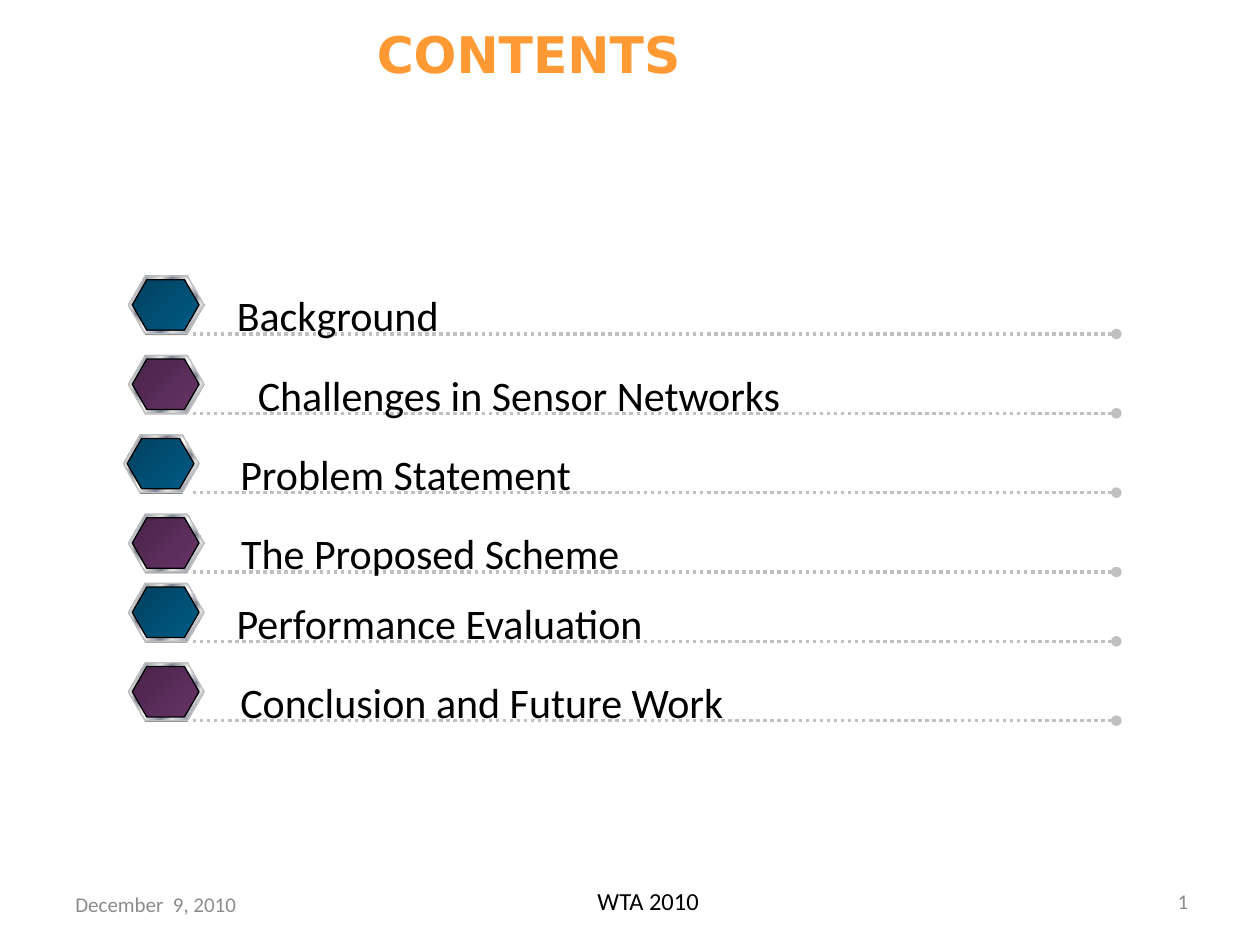
from lxml import etree
from pptx import Presentation
from pptx.dml.color import RGBColor
from pptx.enum.dml import MSO_LINE
from pptx.enum.shapes import MSO_CONNECTOR, MSO_SHAPE
from pptx.enum.text import MSO_ANCHOR, PP_ALIGN
from pptx.oxml import parse_xml
from pptx.oxml.ns import nsdecls, qn
from pptx.util import Inches, Pt

HEXAGON = MSO_SHAPE.HEXAGON
STRAIGHT = MSO_CONNECTOR.STRAIGHT
DOTTED = MSO_LINE.ROUND_DOT
TOP, MIDDLE = MSO_ANCHOR.TOP, MSO_ANCHOR.MIDDLE
LEFT, CENTER, RIGHT = PP_ALIGN.LEFT, PP_ALIGN.CENTER, PP_ALIGN.RIGHT
TITLE_ONLY = 5

TITLE = "CONTENTS"
# text, rule y, hexagon left, text left, text width
ITEMS = [
    ("Background", 2.65, 1.02, 1.69, 1.98),
    ("Challenges in Sensor Networks", 3.28, 1.02, 1.69, 4.86),
    ("Problem Statement", 3.91, 0.98, 1.69, 3.06),
    ("The Proposed Scheme", 4.54, 1.02, 1.61, 3.61),
    ("Performance Evaluation", 5.09, 1.02, 1.61, 3.76),
    ("Conclusion and Future Work", 5.72, 1.02, 1.61, 4.43),
]
DATE, FOOTER = "December  9, 2010", "WTA 2010"

THEME = {
    "font": "Calibri", "title_font": "DejaVu Sans",
    "title": "FF9933", "text": "000000", "muted": "8C8C8C",
    "rule": "C0C0C0", "shade": "808080", "edge": "000000",
    "title_size": 28.8, "item_size": 24, "footer_size": 14, "small_size": 12,
    "metal": [(0, "E6E6E6"), (8, "7D8496"), (26, "E6E6E6"), (34, "7D8496"),
              (46, "E6E6E6"), (50, "FFFFFF"), (54, "E6E6E6"), (66, "7D8496"),
              (74, "E6E6E6"), (92, "7D8496"), (100, "E6E6E6")],
    "cores": [[(0, "00415F"), (100, "005B85")],
              [(0, "492449"), (100, "663366")]],
}
RULE_LEFT, RULE_RIGHT = 1.53, 8.86


def rgb(name):
    return RGBColor.from_string(THEME[name])


def style(p, size, color, align, font="font", bold=False):
    p.alignment = align
    for r in p.runs:
        r.font.size = Pt(THEME[size])
        r.font.name = THEME[font]
        r.font.bold = bold
        r.font.color.rgb = rgb(color)


def add_text(slide, text, box, size, color, align, anchor=TOP, wrap=True):
    sp = slide.shapes.add_textbox(*map(Inches, box))
    tf = sp.text_frame
    tf.word_wrap = wrap
    tf.vertical_anchor = anchor
    tf.text = text
    style(tf.paragraphs[0], size, color, align)
    return tf.paragraphs[0]


def fill_gradient(sp, stops):
    """Fill with a linear gradient running from top left to bottom right."""
    gs = "".join(f'<a:gs pos="{pos * 1000}"><a:srgbClr val="{color}"/></a:gs>'
                 for pos, color in stops)
    grad = parse_xml(f'<a:gradFill {nsdecls("a")} rotWithShape="1"><a:gsLst>{gs}'
                     '</a:gsLst><a:lin ang="2700000" scaled="1"/></a:gradFill>')
    sp.fill.background()
    spPr = sp._element.spPr
    spPr.replace(spPr.find(qn("a:noFill")), grad)


def add_hexagon(group, x, y, w, h, stops=None, line=None):
    sp = group.shapes.add_shape(HEXAGON, *map(Inches, (x, y, w, h)))
    sp.adjustments[0], sp.adjustments[1] = 0.289, 1.155
    sp.shadow.inherit = False
    if stops:
        fill_gradient(sp, stops)
    else:
        sp.fill.solid()
        sp.fill.fore_color.rgb = rgb("shade")
    if line:
        sp.line.color.rgb = rgb(line)
        sp.line.width = Pt(0.75)
    else:
        sp.line.fill.background()


def add_bullet(slide, x, y, core):
    group = slide.shapes.add_group_shape()
    add_hexagon(group, x, y + 0.01, 0.6, 0.46)
    add_hexagon(group, x, y, 0.6, 0.46, THEME["metal"], "rule")
    add_hexagon(group, x + 0.03, y + 0.03, 0.53, 0.4, core, "edge")


def add_rule(slide, y):
    cx = slide.shapes.add_connector(STRAIGHT, Inches(RULE_LEFT), Inches(y),
                                    Inches(RULE_RIGHT), Inches(y))
    cx.line.color.rgb = rgb("rule")
    cx.line.width = Pt(2)
    cx.line.dash_style = DOTTED
    spPr = cx._element.spPr
    etree.SubElement(spPr.find(qn("a:ln")), qn("a:tailEnd"), type="oval")
    etree.SubElement(spPr, qn("a:effectLst"))


def make_slide_number(p):
    """Turn the paragraph's run into a slide number field."""
    r = p.runs[0]._r
    r.tag = qn("a:fld")
    r.set("id", "{B6F15528-21DE-4FAA-801E-634DDDAF4B2B}")
    r.set("type", "slidenum")


def main():
    prs = Presentation()
    prs.slide_width, prs.slide_height = Inches(10), Inches(7.5)
    slide = prs.slides.add_slide(prs.slide_layouts[TITLE_ONLY])

    title = slide.shapes.title
    title.left, title.top, title.width, title.height = map(
        Inches, (2.89, 0.16, 6.52, 0.53))
    tf = title.text_frame
    tf.text = TITLE
    tf.vertical_anchor = MIDDLE
    style(tf.paragraphs[0], "title_size", "title", LEFT, "title_font", True)

    for i, (text, y, hex_x, text_x, text_w) in enumerate(ITEMS):
        add_bullet(slide, hex_x, y - 0.46, THEME["cores"][i % 2])
        add_rule(slide, y)
        add_text(slide, text, (text_x, y - 0.4, text_w, 0.5),
                 "item_size", "text", CENTER, wrap=False)

    add_text(slide, DATE, (0.5, 7, 2.33, 0.35), "small_size", "muted", LEFT, MIDDLE)
    number = add_text(slide, "2", (7.2, 6.98, 2.33, 0.35),
                      "small_size", "muted", RIGHT, MIDDLE)
    make_slide_number(number)
    add_text(slide, FOOTER, (3.98, 6.98, 2.33, 0.35), "footer_size", "text", CENTER)
    prs.save("out.pptx")


if __name__ == "__main__":
    main()
